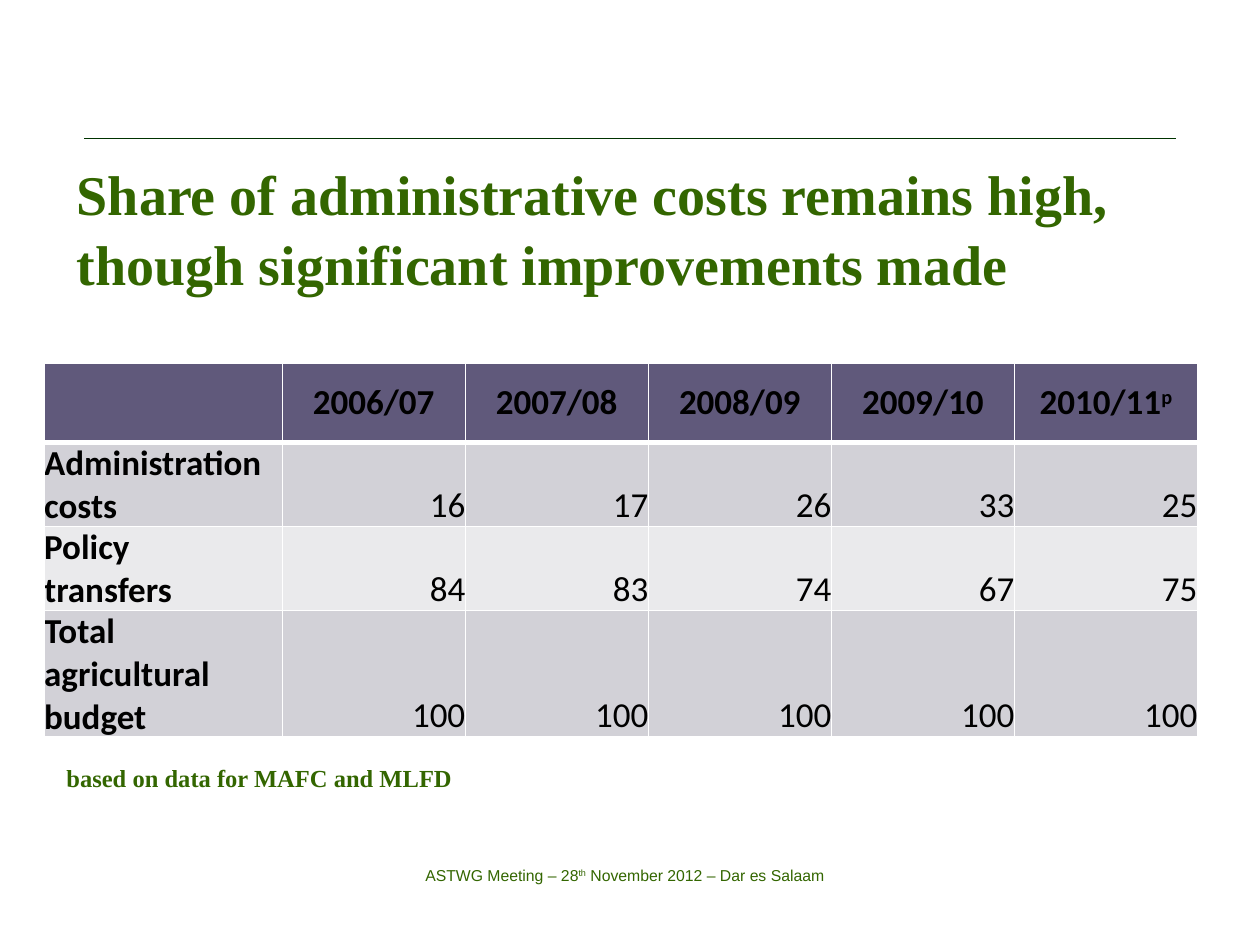
from lxml.etree import SubElement
from pptx import Presentation
from pptx.dml.color import RGBColor
from pptx.enum.shapes import MSO_CONNECTOR
from pptx.enum.text import MSO_ANCHOR, PP_ALIGN
from pptx.oxml.ns import qn
from pptx.util import Cm, Pt

GREEN = "336600"
TITLE = "Share of administrative costs remains high, though significant improvements made"
NOTE = "based on data for MAFC and MLFD"
FOOTER = "ASTWG Meeting – 28^th^ November 2012 – Dar es Salaam"
ROWS = [
    ["", "2006/07", "2007/08", "2008/09", "2009/10", "2010/11^p"],
    ["Administration costs", "16", "17", "26", "33", "25"],
    ["Policy\ntransfers", "84", "83", "74", "67", "75"],
    ["Total agricultural budget", "100", "100", "100", "100", "100"],
]
ROW_FILLS = ["60597B", "D2D1D7", "EAEAEC", "D2D1D7"]
COLUMN_WIDTHS = [4.8] + [3.69] * 5
ROW_HEIGHTS = [1.6] + [1.04] * 3

HEADING = {"name": "Times New Roman", "size": Pt(32), "bold": True}
CAPTION = {"name": "Times New Roman", "size": Pt(14), "bold": True}
SMALL = {"name": "Arial", "size": Pt(9), "bold": False}
LABEL = {"name": "Calibri", "size": Pt(20), "bold": True}
NUMBER = {**LABEL, "bold": False}

TEXT_BOXES = [
    (FOOTER, (4.29, 17.32, 16.61, 0.64), SMALL, PP_ALIGN.CENTER, MSO_ANCHOR.TOP, 1),
    (TITLE, (1.3, 3.02, 22.86, 3.1), HEADING, PP_ALIGN.LEFT, MSO_ANCHOR.MIDDLE, 1.05),
    (NOTE, (1.09, 14.73, 22.86, 1.9), CAPTION, PP_ALIGN.LEFT, MSO_ANCHOR.MIDDLE, 1),
]


def color(value):
    return RGBColor.from_string(value)


def write(frame, text, style, hue, alignment, spacing=1):
    for index, line in enumerate(text.split("\n")):
        paragraph = frame.add_paragraph() if index else frame.paragraphs[0]
        paragraph.alignment = alignment
        paragraph.line_spacing = spacing
        for part, words in enumerate(line.split("^")):
            if not words:
                continue
            run = paragraph.add_run()
            run.text = words
            for name, value in style.items():
                setattr(run.font, name, value)
            run.font.color.rgb = color(hue)
            if part % 2:
                run.font._element.set("baseline", "30000")


def add_border(cell, side, points):
    properties = cell._tc.get_or_add_tcPr()
    line = SubElement(properties, qn(f"a:ln{side}"), w=str(Pt(points)))
    SubElement(SubElement(line, qn("a:solidFill")), qn("a:srgbClr"), val="FFFFFF")


def add_budget_table(slide):
    table = slide.shapes.add_table(
        len(ROWS), len(COLUMN_WIDTHS), Cm(0.89), Cm(7.32),
        Cm(sum(COLUMN_WIDTHS)), Cm(sum(ROW_HEIGHTS))).table
    for column, width in zip(table.columns, COLUMN_WIDTHS):
        column.width = Cm(width)
    for row, height in zip(table.rows, ROW_HEIGHTS):
        row.height = Cm(height)
    for row_index, (values, fill) in enumerate(zip(ROWS, ROW_FILLS)):
        header = row_index == 0
        for column_index, text in enumerate(values):
            cell = table.cell(row_index, column_index)
            for side in ("left", "right", "top", "bottom"):
                setattr(cell, f"margin_{side}", 0)
            cell.vertical_anchor = MSO_ANCHOR.MIDDLE if header else MSO_ANCHOR.BOTTOM
            for side in "LRTB":
                thick = (row_index, side) in ((0, "B"), (1, "T"))
                add_border(cell, side, 3 if thick else 1)
            cell.fill.solid()
            cell.fill.fore_color.rgb = color(fill)
            label = header or column_index == 0
            alignment = (PP_ALIGN.CENTER if header else
                         PP_ALIGN.LEFT if label else PP_ALIGN.RIGHT)
            write(cell.text_frame, text, LABEL if label else NUMBER, "000000", alignment)


def main():
    presentation = Presentation()
    presentation.slide_width, presentation.slide_height = Cm(25.4), Cm(19.05)
    slide = presentation.slides.add_slide(presentation.slide_layouts[6])

    rule = slide.shapes.add_connector(
        MSO_CONNECTOR.STRAIGHT, Cm(1.7), Cm(2.79), Cm(23.7), Cm(2.79))
    rule.line.color.rgb = color("003300")
    rule.line.width = Pt(0.75)
    SubElement(rule._element.spPr, qn("a:effectLst"))

    for text, bounds, style, alignment, anchor, spacing in TEXT_BOXES:
        frame = slide.shapes.add_textbox(*map(Cm, bounds)).text_frame
        frame.word_wrap = True
        frame.vertical_anchor = anchor
        write(frame, text, style, GREEN, alignment, spacing)

    add_budget_table(slide)
    presentation.save("out.pptx")


if __name__ == "__main__":
    main()
